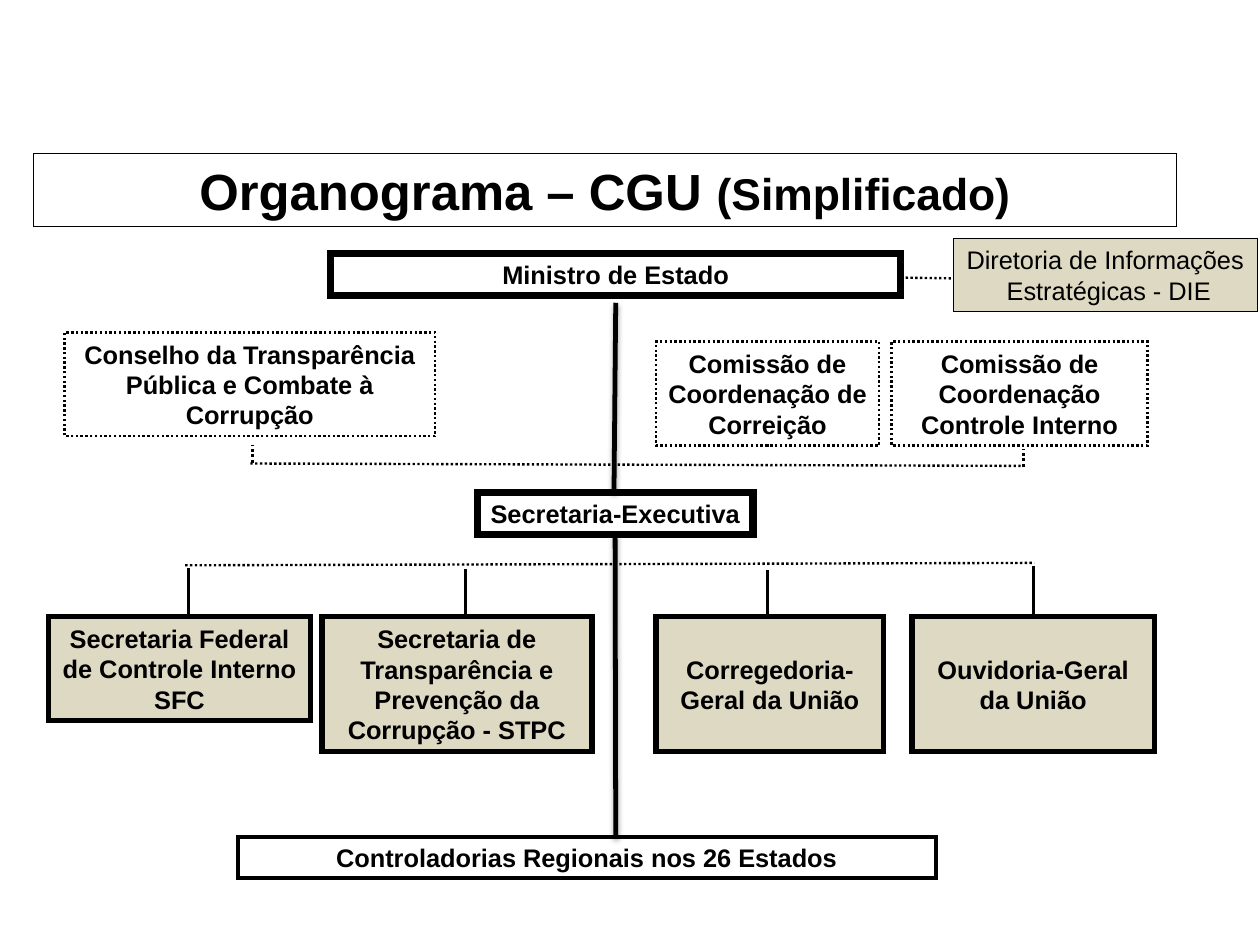
import pptx
import pptx.dml.color
import pptx.enum.dml
import pptx.enum.shapes
import pptx.enum.text
import pptx.oxml
import pptx.oxml.ns
import pptx.util

SLIDE_WIDTH = pptx.util.Cm(28)
SLIDE_HEIGHT = pptx.util.Cm(21)
INK = "000000"
SAND = "DDD9C3"
DOTTED = pptx.enum.dml.MSO_LINE.ROUND_DOT
UNIT_TOP = 65.25
TRUNK_FOOT = 88.6
COUNCIL_HEIGHT = 11
BAND_HEIGHT = 4.47
TITLE_HEIGHT = 7.74


def across(percent):
    return round(SLIDE_WIDTH * percent / 100)


def down(percent):
    return round(SLIDE_HEIGHT * percent / 100)


def colour(hex_value):
    return pptx.dml.color.RGBColor.from_string(hex_value)


def drawing_xml(tag, attributes="", content=""):
    namespace = pptx.oxml.ns.nsdecls("a")
    return pptx.oxml.parse_xml(f"<a:{tag} {namespace} {attributes}>{content}</a:{tag}>")


def apply_format(target, values):
    for attribute, value in values.items():
        setattr(target, attribute, value)


def draw_outline(line, weight, dash=None):
    line.color.rgb = colour(INK)
    apply_format(line, {"width": pptx.util.Pt(weight), "dash_style": dash})


def draw_frame(box, weight, dash=None):
    draw_outline(box.line, weight, dash)
    outline = box._element.spPr.find(pptx.oxml.ns.qn("a:ln"))
    outline.append(drawing_xml("miter", 'lim="800000"'))


def write_text(frame, paragraphs, bold=True, wrap=True):
    apply_format(frame, {
        "word_wrap": wrap,
        "auto_size": pptx.enum.text.MSO_AUTO_SIZE.NONE,
        "vertical_anchor": pptx.enum.text.MSO_ANCHOR.MIDDLE,
        "margin_left": pptx.util.Inches(0.1),
        "margin_right": pptx.util.Inches(0.1),
        "margin_top": pptx.util.Inches(0.05),
        "margin_bottom": pptx.util.Inches(0.05),
    })
    for index, pieces in enumerate(paragraphs):
        paragraph = frame.paragraphs[0] if index == 0 else frame.add_paragraph()
        paragraph.alignment = pptx.enum.text.PP_ALIGN.CENTER
        for words, size in pieces:
            run = paragraph.add_run()
            run.text = words
            run.font.color.rgb = colour(INK)
            apply_format(run.font, {"name": "Arial", "size": pptx.util.Pt(size), "bold": bold})


def add_title(slide, pieces, left, top, width, height):
    title = slide.shapes.title
    apply_format(title, {"left": across(left), "top": down(top),
                         "width": across(width), "height": down(height)})
    draw_frame(title, 0.75)
    write_text(title.text_frame, [pieces])


def add_unit(slide, lines, left, top, width, height, weight,
             fill=None, dash=None, bold=True, wrap=True):
    unit = slide.shapes.add_shape(pptx.enum.shapes.MSO_SHAPE.RECTANGLE,
                                  across(left), down(top), across(width), down(height))
    unit.shadow.inherit = False
    if fill:
        unit.fill.solid()
        unit.fill.fore_color.rgb = colour(fill)
    else:
        unit.fill.background()
    draw_frame(unit, weight, dash)
    write_text(unit.text_frame, [[(words, 16)] for words in lines], bold, wrap)


def add_link(slide, start, end, weight, dash=None, shadow=False):
    link = slide.shapes.add_connector(pptx.enum.shapes.MSO_CONNECTOR.STRAIGHT,
                                      across(start[0]), down(start[1]),
                                      across(end[0]), down(end[1]))
    draw_outline(link.line, weight, dash)
    effects = drawing_xml("effectLst")
    if shadow:
        effects.append(drawing_xml(
            "outerShdw", 'blurRad="40000" dist="23000" dir="5400000" rotWithShape="0"',
            f'<a:srgbClr val="{INK}"><a:alpha val="35000"/></a:srgbClr>'))
    link._element.spPr.append(effects)


def add_links(slide):
    for start, end in [((48.73, 52.1), (48.87, 32.04)),
                       ((48.82, 56.57), (48.87, TRUNK_FOOT))]:
        add_link(slide, start, end, 3, shadow=True)
    for column, top in [(14.97, 60.1), (36.93, 60.2), (60.89, 60.3), (82.03, 59.85)]:
        add_link(slide, (column, top), (column, UNIT_TOP), 2)
    for start, end, weight in [
        ((19.87, 49.05), (81.2, 49.3), 1.5),
        ((14.7, 59.82), (82.1, 59.57), 1.5),
        ((71.5, 29.38), (77.86, 29.5), 1.5),
        ((20.05, 48.97), (20.05, 47.04), 1.75),
        ((81.2, 49.4), (81.2, 47.5), 1.75),
    ]:
        add_link(slide, start, end, weight, DOTTED)


def add_units(slide):
    add_unit(slide, ["Ministro de Estado"], 26.23, 26.8, 45.28, BAND_HEIGHT, 4.5)
    add_unit(slide, ["Secretaria-Executiva"], 37.9, 52.1, 21.87, BAND_HEIGHT, 4.5, wrap=False)
    add_unit(slide, ["Controladorias Regionais nos 26 Estados"],
             18.87, TRUNK_FOOT, 55.4, 4.35, 2.5)
    add_unit(slide, ["Diretoria de Informações", " Estratégicas - DIE"],
             75.65, 25.22, 24.14, TITLE_HEIGHT, 0.75, fill=SAND, bold=False, wrap=False)
    for name, left, top, width in [
        ("Conselho da Transparência Pública e Combate à Corrupção", 5.13, 35.17, 29.4),
        ("Comissão de Coordenação de Correição", 52.07, 36.15, 17.7),
        ("Comissão de Coordenação Controle Interno", 70.76, 36.15, 20.33),
    ]:
        add_unit(slide, [name], left, top, width, COUNCIL_HEIGHT, 1.5, dash=DOTTED)
    for name, left, width, height in [
        ("Secretaria Federal de Controle Interno SFC", 3.86, 20.78, 11),
        ("Secretaria de Transparência e Prevenção da Corrupção - STPC", 25.55, 21.42, 14.27),
        ("Corregedoria-Geral da União", 52.07, 18.06, 14.27),
        ("Ouvidoria-Geral da União", 72.38, 19.24, 14.27),
    ]:
        add_unit(slide, [name], left, UNIT_TOP, width, height, 3.5, fill=SAND)


def main():
    deck = pptx.Presentation()
    apply_format(deck, {"slide_width": SLIDE_WIDTH, "slide_height": SLIDE_HEIGHT})
    slide = deck.slides.add_slide(deck.slide_layouts[5])
    add_title(slide, [("Organograma – CGU ", 32), ("(Simplificado)", 28)],
              2.63, 16.25, 90.74, TITLE_HEIGHT)
    add_links(slide)
    add_units(slide)
    deck.save("out.pptx")


if __name__ == "__main__":
    main()
